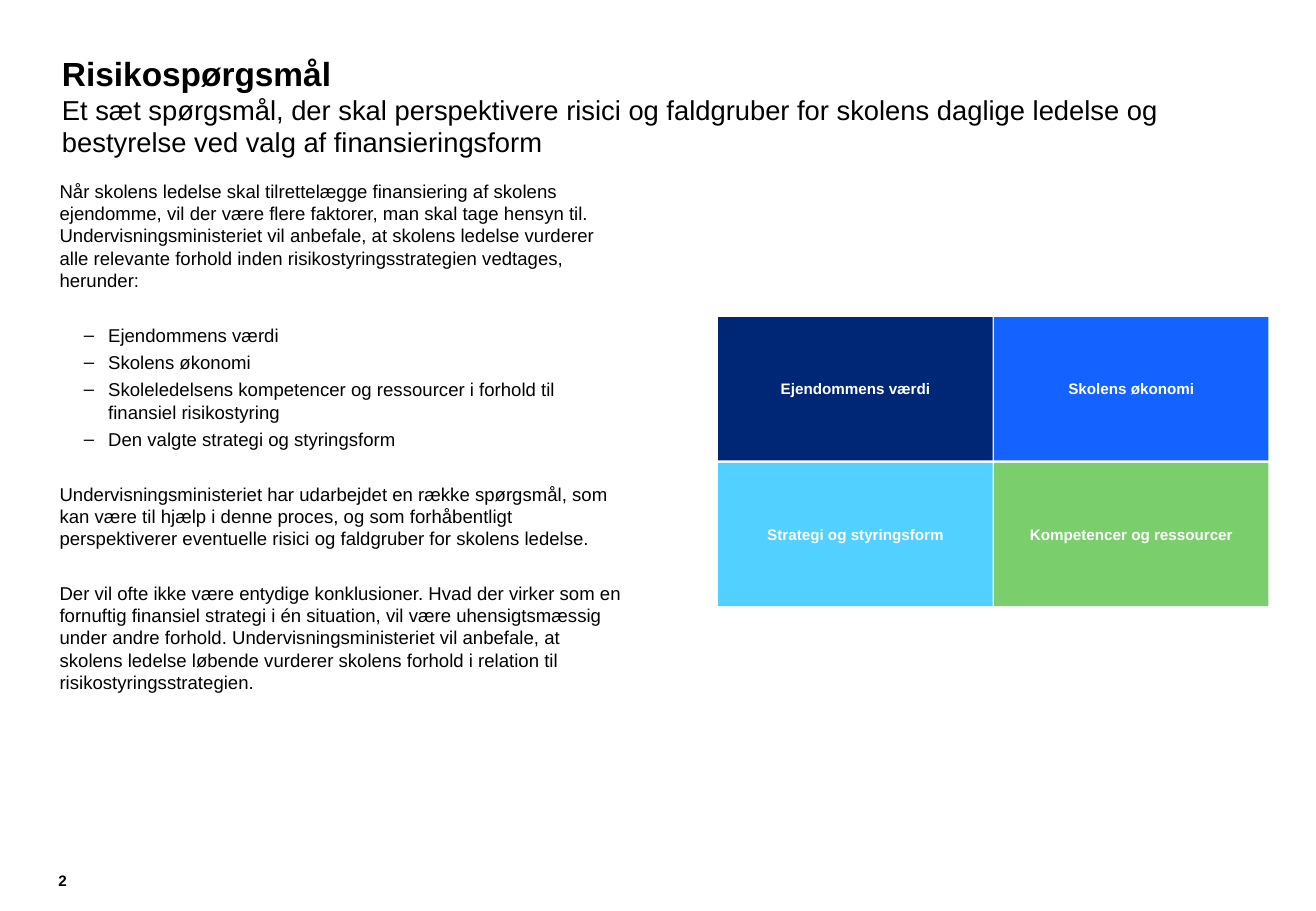
from lxml import etree
from pptx import Presentation
from pptx.dml.color import RGBColor
from pptx.enum.shapes import MSO_SHAPE
from pptx.enum.text import MSO_ANCHOR, MSO_AUTO_SIZE, PP_ALIGN
from pptx.oxml.ns import qn
from pptx.util import Inches, Pt

RECTANGLE = MSO_SHAPE.RECTANGLE
TOP, MIDDLE = MSO_ANCHOR.TOP, MSO_ANCHOR.MIDDLE
NO_AUTOFIT = MSO_AUTO_SIZE.NONE
LEFT, CENTER = PP_ALIGN.LEFT, PP_ALIGN.CENTER

COLORS = {
    "text": "000000",
    "white": "FFFFFF",
    "navy": "002776",
    "blue": "1462FF",
    "sky": "52D0FF",
    "green": "7BCE6C",
}

TITLE = "Risikospørgsmål"
SUBTITLE = (
    "Et sæt spørgsmål, der skal perspektivere risici og faldgruber for skolens "
    "daglige ledelse og bestyrelse ved valg af finansieringsform"
)
BODY_GAP = 19.2
BODY = [
    ("Når skolens ledelse skal tilrettelægge finansiering af skolens ejendomme, "
     "vil der være flere faktorer, man skal tage hensyn til. "
     "Undervisningsministeriet vil anbefale, at skolens ledelse vurderer alle "
     "relevante forhold inden risikostyringsstrategien vedtages, herunder:", False, BODY_GAP),
    ("Ejendommens værdi", True, 3),
    ("Skolens økonomi", True, 3),
    ("Skoleledelsens kompetencer og ressourcer i forhold til finansiel "
     "risikostyring", True, 3),
    ("Den valgte strategi og styringsform", True, BODY_GAP),
    ("Undervisningsministeriet har udarbejdet en række spørgsmål, som kan være "
     "til hjælp i denne proces, og som forhåbentligt perspektiverer eventuelle "
     "risici og faldgruber for skolens ledelse.", False, BODY_GAP),
    ("Der vil ofte ikke være entydige konklusioner. Hvad der virker som en "
     "fornuftig finansiel strategi i én situation, vil være uhensigtsmæssig "
     "under andre forhold. Undervisningsministeriet vil anbefale, at skolens "
     "ledelse løbende vurderer skolens forhold i relation til "
     "risikostyringsstrategien.", False, 3),
]
QUADRANTS = [
    ("Ejendommens værdi", "navy"),
    ("Skolens økonomi", "blue"),
    ("Strategi og styringsform", "sky"),
    ("Kompetencer og ressourcer", "green"),
]


class SlideBuilder:
    font = "Arial"

    def __init__(self, page):
        self.page = page

    def place(self, shape, left, top, width, height):
        shape.left, shape.top = Inches(left), Inches(top)
        shape.width, shape.height = Inches(width), Inches(height)

    def frame(self, shape, anchor=TOP, inset=0):
        frame = shape.text_frame
        frame.word_wrap = True
        frame.auto_size = NO_AUTOFIT
        frame.vertical_anchor = anchor
        frame.margin_left = frame.margin_right = Inches(inset)
        frame.margin_top = frame.margin_bottom = Inches(inset)
        return frame

    def span(self, para, text, size, bold=False, color="text"):
        span = para.add_run()
        span.text = text
        span.font.name = self.font
        span.font.size = Pt(size)
        span.font.bold = bold
        span.font.color.rgb = RGBColor.from_string(COLORS[color])

    def title(self, heading, subheading, *bounds):
        shape = self.page.shapes.title
        self.place(shape, *bounds)
        frame = self.frame(shape)
        frame.margin_top = Inches(0.06)
        para = frame.paragraphs[0]
        para.alignment = LEFT
        para.line_spacing = Pt(19.3)
        self.span(para, heading, 19.8, bold=True)
        para.add_line_break()
        self.span(para, subheading, 16.2)

    def body(self, entries, *bounds):
        shape = self.page.placeholders[1]
        self.place(shape, *bounds)
        frame = self.frame(shape)
        for index, (text, bulleted, space_after) in enumerate(entries):
            para = frame.add_paragraph() if index else frame.paragraphs[0]
            para.level = 1 if bulleted else 0
            para.line_spacing = Pt(13.2)
            para.space_before = Pt(0)
            para.space_after = Pt(space_after)
            self.bullet(para, bulleted)
            self.span(para, text, 11)

    def bullet(self, para, bulleted):
        properties = para._p.get_or_add_pPr()
        properties.set("marL", str(Inches(0.4 if bulleted else 0)))
        properties.set("indent", str(Inches(-0.2 if bulleted else 0)))
        if bulleted:
            etree.SubElement(properties, qn("a:buFont")).set("typeface", self.font)
            etree.SubElement(properties, qn("a:buChar")).set("char", "‒")
        else:
            etree.SubElement(properties, qn("a:buNone"))

    def rectangle(self, text, color, *bounds):
        shape = self.page.shapes.add_shape(RECTANGLE, *map(Inches, bounds))
        shape.shadow.inherit = False
        shape.fill.solid()
        shape.fill.fore_color.rgb = RGBColor.from_string(COLORS[color])
        shape.line.fill.background()
        para = self.frame(shape, MIDDLE, 0.08).paragraphs[0]
        para.alignment = CENTER
        self.span(para, text, 9, bold=True, color="white")

    def label(self, text, *bounds):
        box = self.page.shapes.add_textbox(*map(Inches, bounds))
        para = self.frame(box).paragraphs[0]
        para.line_spacing = Pt(10.8)
        self.span(para, text, 9, bold=True)


def main():
    deck = Presentation()
    deck.slide_width, deck.slide_height = Inches(10.83), Inches(7.5)
    builder = SlideBuilder(deck.slides.add_slide(deck.slide_layouts[1]))
    builder.title(TITLE, SUBTITLE, 0.51, 0.44, 9.96, 0.78)
    builder.body(BODY, 0.49, 1.48, 4.65, 5.58)
    for index, (text, color) in enumerate(QUADRANTS):
        row, column = divmod(index, 2)
        builder.rectangle(text, color, 5.91 + 2.27 * column, 2.61 + 1.2 * row, 2.26, 1.18)
    builder.label("2", 0.48, 7.17, 0.34, 0.16)
    deck.save("out.pptx")


if __name__ == "__main__":
    main()
